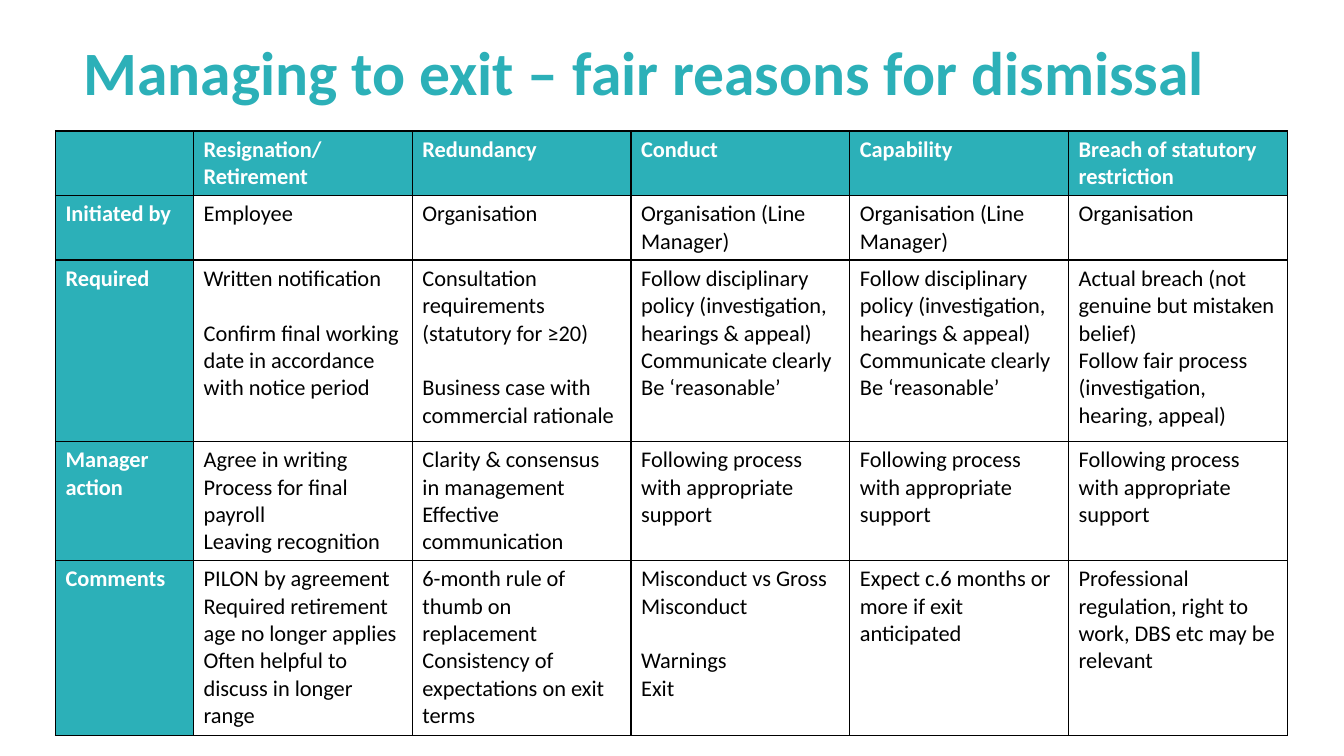
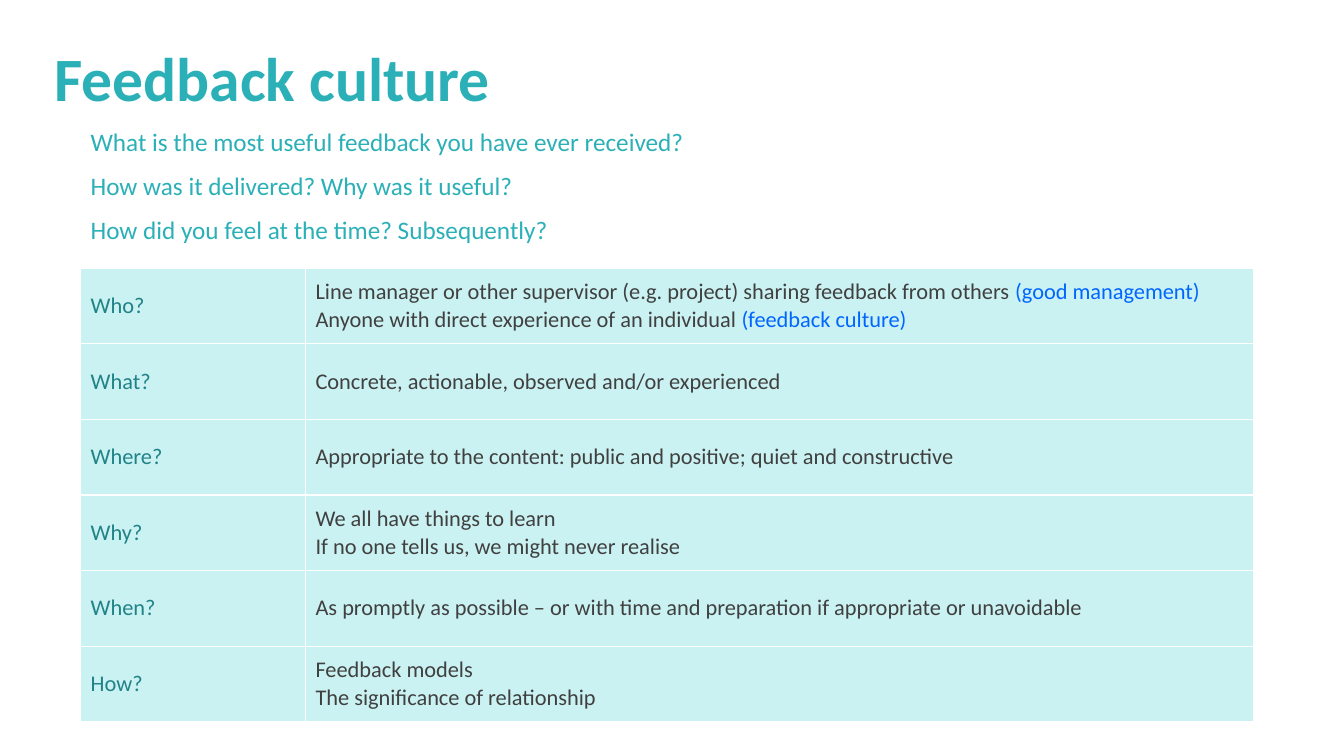
"""Build two slides on managing exits and feedback culture."""
from lxml import etree
from pptx import Presentation
from pptx.dml.color import RGBColor
from pptx.enum import text as t
from pptx.oxml import ns
from pptx.util import Inches, Pt

TEAL = RGBColor(0x2C, 0xB0, 0xB8)
DEEP = RGBColor(0x20, 0x83, 0x88)
AQUA = RGBColor(0x33, 0xCC, 0xCC)
BLUE = RGBColor(0x00, 0x66, 0xFF)
GREY = RGBColor(0x40, 0x40, 0x40)
BLACK = RGBColor(0, 0, 0)
WHITE = RGBColor(0xFF, 0xFF, 0xFF)

TITLE = {"size": Pt(44), "bold": True, "color": TEAL}
ASK = {"size": Pt(18), "bold": False, "color": TEAL}
HEAD = {"size": Pt(16), "bold": True, "color": WHITE}
BODY = {"size": Pt(16), "bold": False, "color": BLACK}
LABEL = {**BODY, "color": DEEP}
REPLY = {**BODY, "color": GREY}
GAP = Pt(19.6)

POLICY = ("Follow disciplinary policy (investigation, hearings & appeal)\n"
          "Communicate clearly\nBe ‘reasonable’")
SUPPORT = "Following process with appropriate support"
LINE = "Organisation (Line Manager)"

EXITS = [
    ["", "Resignation/ Retirement", "Redundancy", "Conduct", "Capability",
     "Breach of statutory restriction"],
    ["Initiated by", "Employee", "Organisation", LINE, LINE, "Organisation"],
    ["Required",
     "Written notification\n\nConfirm final working date in accordance with notice period",
     "Consultation requirements (statutory for ≥20)\n\n"
     "Business case with commercial rationale",
     POLICY, POLICY,
     "Actual breach (not genuine but mistaken belief)\n"
     "Follow fair process (investigation, hearing, appeal)"],
    ["Manager action",
     "Agree in writing\nProcess for final payroll\nLeaving recognition",
     "Clarity & consensus in management\nEffective communication",
     SUPPORT, SUPPORT, SUPPORT],
    ["Comments",
     "PILON by agreement\nRequired retirement age no longer applies\n"
     "Often helpful to discuss in longer range",
     "6-month rule of thumb on replacement\n"
     "Consistency of expectations on exit terms",
     "Misconduct vs Gross Misconduct\n\nWarnings\nExit",
     "Expect c.6 months or more if exit anticipated",
     "Professional regulation, right to work, DBS etc may be relevant"],
]

ASKS = ("What is the most useful feedback you have ever received?\n"
        "How was it delivered? Why was it useful?\n"
        "How did you feel at the time? Subsequently?")

HABITS = [
    ["Who?", "Line manager or other supervisor (e.g. project) sharing feedback "
             "from others |(good management)\n"
             "Anyone with direct experience of an individual |(feedback culture)"],
    ["What?", "Concrete, actionable, observed and/or experienced"],
    ["Where?", "Appropriate to the content: public and positive; quiet and constructive"],
    ["Why?", "We all have things to learn\nIf no one tells us, we might never realise"],
    ["When?", "As promptly as possible – or with time and preparation "
              "if appropriate or unavoidable"],
    ["How?", "Feedback models\nThe significance of relationship"],
]


def style(font, look):
    font.name = "Calibri"
    for key, value in look.items():
        if key == "color":
            font.color.rgb = value
        else:
            setattr(font, key, value)


def write(frame, words, look, **form):
    """Write one paragraph a line; a blank line adds a gap, a bar starts a blue run."""
    first, gap = True, False
    for line in words.split("\n"):
        if not line and not first:
            gap = True
            continue
        para = frame.paragraphs[0] if first else frame.add_paragraph()
        for key, value in form.items():
            if not (first and key == "space_before"):
                setattr(para, key, value)
        if gap:
            para.space_before = GAP
        for spot, part in enumerate(line.split("|")):
            run = para.add_run()
            run.text = part
            style(run.font, {**look, "color": BLUE} if spot else look)
        first, gap = False, False


def add_text(slide, box, words, look, anchor, **form):
    frame = slide.shapes.add_textbox(*map(Inches, box)).text_frame
    frame.word_wrap = True
    frame.vertical_anchor = anchor
    write(frame, words, look, line_spacing=0.9, **form)


def add_title(slide, box, words, align):
    add_text(slide, box, words, TITLE, t.MSO_ANCHOR.MIDDLE, alignment=align)


def edge(cell, color):
    props = cell._tc.get_or_add_tcPr()
    for side in ("lnL", "lnR", "lnT", "lnB"):
        line = etree.SubElement(props, ns.qn("a:" + side), w=str(Pt(1)))
        fill = etree.SubElement(line, ns.qn("a:solidFill"))
        etree.SubElement(fill, ns.qn("a:srgbClr"), val=str(color))


def paint(cell, color, alpha=None):
    if color is None:
        cell.fill.background()
        return
    cell.fill.solid()
    cell.fill.fore_color.rgb = color
    if alpha:
        tint = cell._tc.tcPr.find(ns.qn("a:solidFill"))[0]
        etree.SubElement(tint, ns.qn("a:alpha"), val=str(alpha * 1000))


def add_grid(slide, left, top, rows, wide, high, rule, anchor, pick):
    """Add a table; pick gives the look, fill and alpha for a row and column."""
    size = (left, top, sum(wide), sum(high))
    grid = slide.shapes.add_table(len(rows), len(wide), *map(Inches, size)).table
    grid.first_row = grid.horz_banding = False
    for col, width in zip(grid.columns, wide):
        col.width = Inches(width)
    for row, height in zip(grid.rows, high):
        row.height = Inches(height)
    for r, row in enumerate(rows):
        for c, words in enumerate(row):
            cell = grid.cell(r, c)
            look, color, alpha = pick(r, c)
            cell.vertical_anchor = anchor
            edge(cell, rule)
            paint(cell, color, alpha)
            write(cell.text_frame, words, look)


def exit_look(r, c):
    return (BODY, None, None) if r and c else (HEAD, TEAL, None)


def habit_look(r, c):
    return (REPLY if c else LABEL, AQUA, 25)


def main():
    deck = Presentation()
    deck.slide_width, deck.slide_height = Inches(13.33), Inches(7.5)
    exits, habits = (deck.slides.add_slide(deck.slide_layouts[6]) for _ in range(2))

    add_title(exits, (0.36, 0.27, 12.07, 0.95),
              "Managing to exit – fair reasons for dismissal", t.PP_ALIGN.CENTER)
    add_grid(exits, 0.55, 1.3, EXITS, [1.37] + [2.17] * 5,
             [0.64, 0.64, 1.8, 1.18, 1.74], BLACK, t.MSO_ANCHOR.TOP, exit_look)

    add_title(habits, (0.44, 0.37, 11.5, 0.87), "Feedback culture", t.PP_ALIGN.LEFT)
    add_grid(habits, 0.8, 2.66, HABITS, [2.23, 9.4], [0.75] * len(HABITS),
             WHITE, t.MSO_ANCHOR.MIDDLE, habit_look)
    add_text(habits, (0.8, 1.24, 12.11, 1.29), ASKS, ASK, t.MSO_ANCHOR.TOP,
             space_before=Pt(6), space_after=Pt(6))

    deck.save("out.pptx")


if __name__ == "__main__":
    main()
